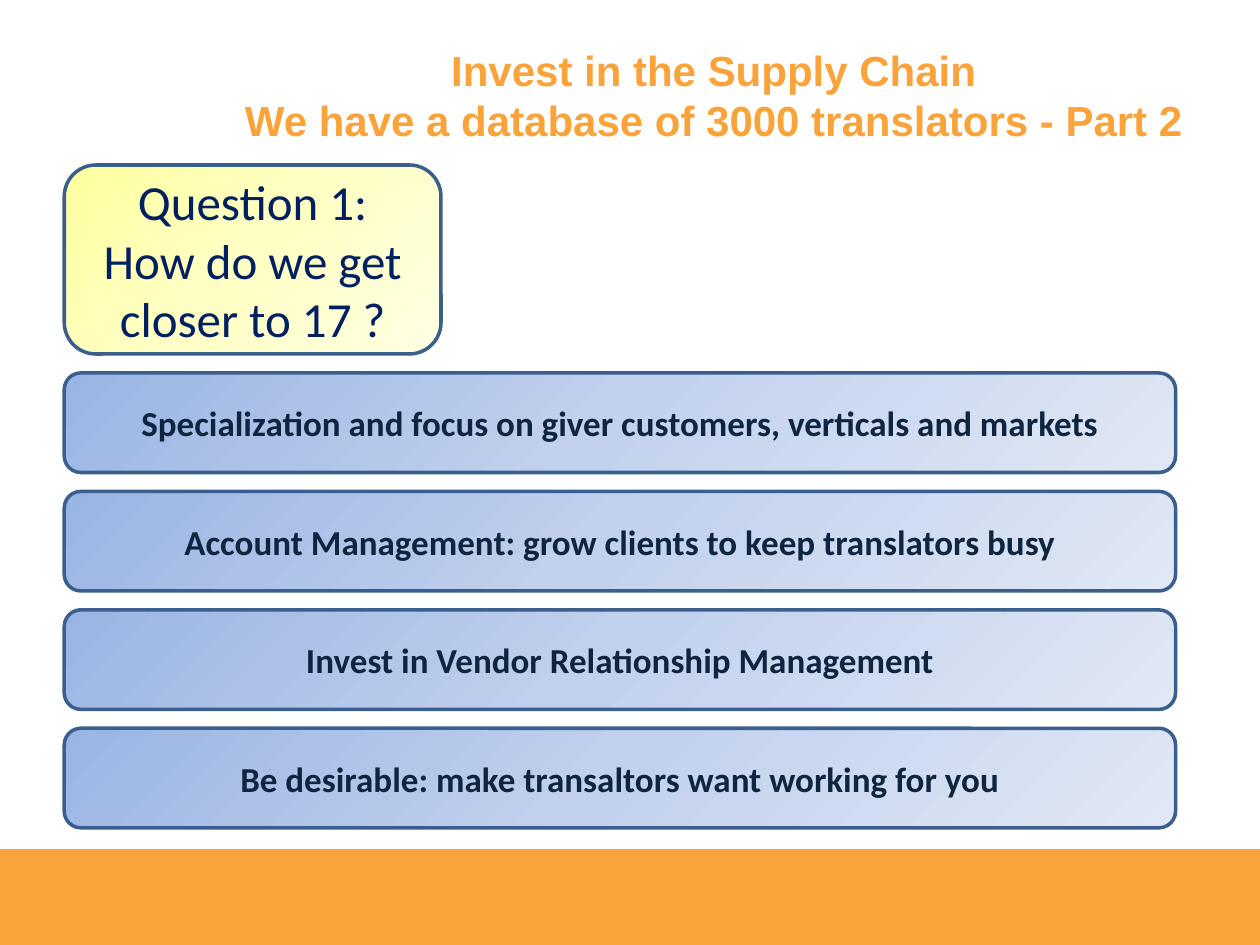
from copy import deepcopy
from dataclasses import dataclass

from pptx import Presentation
from pptx.dml.color import RGBColor
from pptx.enum import shapes, text
from pptx.oxml.ns import qn
from pptx.util import Inches, Pt


@dataclass(frozen=True)
class Theme:
    orange: str = "FAA33A"
    outline: str = "3A5F8C"
    question_ink: str = "002060"
    answer_ink: str = "0F243E"
    yellows: tuple = ("FFFFA0", "FFFFC5", "FFFFE3")
    blues: tuple = ("9AB5E4", "C2D1ED", "E1E8F5")
    title_size: int = 24
    question_size: int = 28
    answer_size: int = 20
    title_font: str = "Arial"
    body_font: str = "Calibri"


theme = Theme()


def write(shape, lines, font_name, size, color, bold):
    frame = shape.text_frame
    frame.text = "\n".join(lines)
    frame.word_wrap = True
    frame.auto_size = text.MSO_AUTO_SIZE.NONE
    frame.vertical_anchor = text.MSO_ANCHOR.MIDDLE
    for para in frame.paragraphs:
        para.alignment = text.PP_ALIGN.CENTER
        para.font.name = font_name
        para.font.size = Pt(size)
        para.font.bold = bold
        para.font.color.rgb = RGBColor.from_string(color)


def add_panel(page, top, width, height, colors):
    panel = page.shapes.add_shape(
        shapes.MSO_SHAPE.ROUNDED_RECTANGLE,
        Inches(0.51), Inches(top), Inches(width), Inches(height))
    panel.shadow.inherit = False
    panel.line.color.rgb = RGBColor.from_string(theme.outline)
    panel.line.width = Pt(2)
    panel.fill.gradient()
    panel.fill.gradient_angle = 315
    stop_list = panel._element.spPr.find(qn("a:gradFill")).find(qn("a:gsLst"))
    stop_list.insert(1, deepcopy(stop_list[0]))
    for stop, color, position in zip(panel.fill.gradient_stops, colors, (0, 0.5, 1)):
        stop.color.rgb = RGBColor.from_string(color)
        stop.position = position
    return panel


deck = Presentation()
deck.slide_width, deck.slide_height = Inches(10), Inches(7.5)
page = deck.slides.add_slide(deck.slide_layouts[5])

footer = page.shapes.add_shape(
    shapes.MSO_SHAPE.RECTANGLE, Inches(0), Inches(6.74), Inches(10), Inches(0.76))
footer.shadow.inherit = False
footer.fill.solid()
footer.fill.fore_color.rgb = RGBColor.from_string(theme.orange)
footer.line.fill.background()

title = page.shapes.title
title.left, title.top = Inches(1.83), Inches(0.3)
title.width, title.height = Inches(7.67), Inches(0.9)
title.text_frame.margin_left = title.text_frame.margin_right = Inches(0.05)
write(title,
      ["Invest in the Supply Chain\vWe have a database of 3000 translators - Part 2"],
      theme.title_font, theme.title_size, theme.orange, True)

question = add_panel(page, 1.31, 2.99, 1.5, theme.yellows)
write(question, ["Question 1:", "How do we get closer to 17 ?"],
      theme.body_font, theme.question_size, theme.question_ink, False)

answers = [
    "Specialization and focus on giver customers, verticals and markets",
    "Account Management: grow clients to keep translators busy",
    "Invest in Vendor Relationship Management",
    "Be desirable: make transaltors want working for you",
]
for index, answer in enumerate(answers):
    panel = add_panel(page, 2.96 + 0.94 * index, 8.82, 0.79, theme.blues)
    write(panel, [answer], theme.body_font, theme.answer_size, theme.answer_ink, True)

deck.save("out.pptx")
